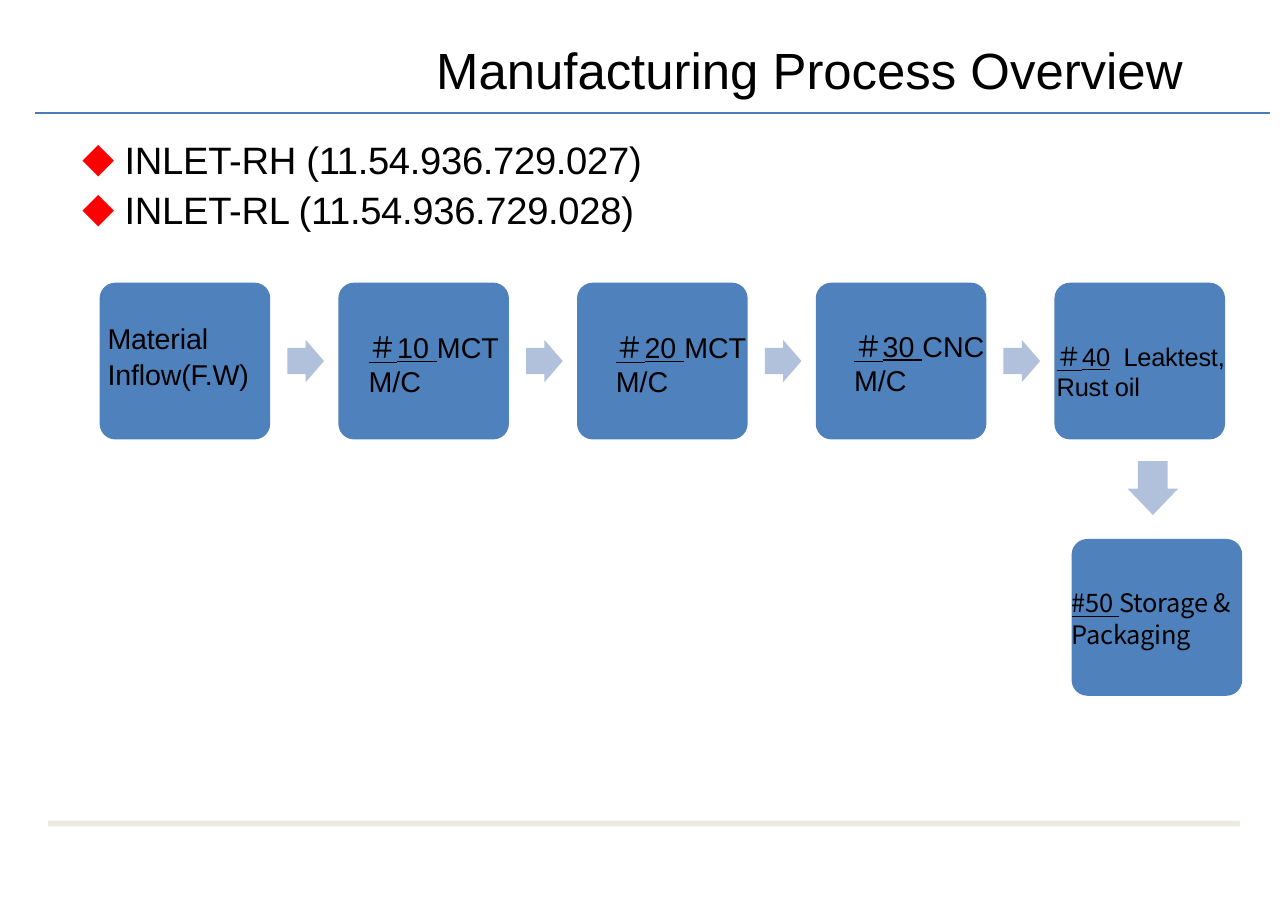
from lxml import etree
from pptx import Presentation
from pptx.dml.color import RGBColor
from pptx.enum.shapes import MSO_CONNECTOR, MSO_SHAPE
from pptx.oxml.ns import qn
from pptx.util import Inches, Pt

BLACK = RGBColor(0, 0, 0)
STEP_BLUE = RGBColor(0x4F, 0x81, 0xBC)
ARROW_BLUE = RGBColor(0xB1, 0xC1, 0xDB)
RULE_BLUE = RGBColor(0x49, 0x7D, 0xBA)
FOOTER_BEIGE = RGBColor(0xED, 0xEB, 0xE0)
LATIN, KOREAN = "Arial", "Noto Sans CJK KR"

presentation = Presentation()
presentation.slide_width = Inches(11.25)
presentation.slide_height = Inches(95 / 12)
slide = presentation.slides.add_slide(presentation.slide_layouts[6])


def add_block(kind, left, top, width, height, color, adjustments=()):
    shape = slide.shapes.add_shape(
        kind, Inches(left), Inches(top), Inches(width), Inches(height))
    shape.shadow.inherit = False
    shape.fill.solid()
    shape.fill.fore_color.rgb = color
    shape.line.fill.background()
    for index, value in enumerate(adjustments):
        shape.adjustments[index] = value


def add_text(left, top, width, height, size, lines, line_spacing=1.0):
    """Add a text box; each line is a list of (text, font, underlined, spacing)."""
    box = slide.shapes.add_textbox(
        Inches(left), Inches(top), Inches(width), Inches(height))
    frame = box.text_frame
    frame.word_wrap = True
    frame.margin_left = frame.margin_right = frame.margin_bottom = 0
    frame.margin_top = Inches(0.01)
    for index, parts in enumerate(lines):
        paragraph = frame.paragraphs[0] if index == 0 else frame.add_paragraph()
        paragraph.line_spacing = line_spacing
        for text, font_name, underlined, spacing in parts:
            run = paragraph.add_run()
            run.text = text
            run.font.size = Pt(size)
            run.font.color.rgb = BLACK
            run.font.underline = underlined
            run.font.name = font_name
            properties = run.font._element
            properties.set("spc", str(spacing))
            etree.SubElement(properties, qn("a:ea"), typeface=font_name)
    return frame


add_block(MSO_SHAPE.RECTANGLE, 0.42, 7.17, 10.41, 0.05, FOOTER_BEIGE)
add_text(3.81, 0.33, 7.34, 0.55, 32,
         [[("Manufacturing Process Overview", LATIN, False, 0)]])

title_rule = slide.shapes.add_connector(
    MSO_CONNECTOR.STRAIGHT, Inches(0.31), Inches(0.99), Inches(11.09), Inches(0.99))
title_rule.line.color.rgb = RULE_BLUE
title_rule.line.width = Pt(1.25)
etree.SubElement(title_rule._element.spPr, qn("a:effectLst"))

# Part numbers
parts = ["INLET-RH (11.54.936.729.027)", "INLET-RL (11.54.936.729.028)"]
for row, part in enumerate(parts):
    frame = add_text(0.71, 1.18 + 0.44 * row, 5.5, 0.42, 24,
                     [[(part, LATIN, False, -20)]])
    properties = frame.paragraphs[0]._p.get_or_add_pPr()
    properties.set("marL", str(Inches(0.38)))
    properties.set("indent", str(Inches(-0.37)))
    bullet_color = etree.SubElement(properties, qn("a:buClr"))
    etree.SubElement(bullet_color, qn("a:srgbClr"), val="FF0000")
    etree.SubElement(properties, qn("a:buSzPct"), val="85000")
    etree.SubElement(properties, qn("a:buFont"), typeface=KOREAN)
    etree.SubElement(properties, qn("a:buChar"), char="◆")

# Process steps and the arrows between them
STEP_LEFT, STEP_TOP, STEP_PITCH = 0.87, 2.47, 2.085
STEP_WIDTH, STEP_HEIGHT = 1.49, 1.37
for step in range(5):
    left = STEP_LEFT + STEP_PITCH * step
    add_block(MSO_SHAPE.ROUNDED_RECTANGLE, left, STEP_TOP, STEP_WIDTH, STEP_HEIGHT,
              STEP_BLUE, [0.1])
    if step < 4:
        add_block(MSO_SHAPE.RIGHT_ARROW, left + 1.64, 2.97, 0.32, 0.37,
                  ARROW_BLUE, [0.62, 0.5])
add_block(MSO_SHAPE.DOWN_ARROW, 9.85, 4.03, 0.44, 0.47, ARROW_BLUE, [0.59, 0.52])
add_block(MSO_SHAPE.ROUNDED_RECTANGLE, 9.36, 4.71, STEP_WIDTH, STEP_HEIGHT,
          STEP_BLUE, [0.1])

# Step labels
add_text(0.94, 2.77, 1.44, 0.6, 18,
         [[("Material Inflow(F.W)", LATIN, False, -10)]], 1.07)
machines = [(3.22, 2.87, "10", "MCT M/C"), (5.38, 2.87, "20", "MCT M/C"),
            (7.46, 2.86, "30", "CNC M/C")]
for left, top, number, machine in machines:
    add_text(left, top, 1.14, 0.62, 18,
             [[("＃", KOREAN, True, 0), (number, LATIN, True, 0),
               (" ", LATIN, True, -20), (machine, LATIN, False, 0)]])
add_text(9.23, 2.97, 1.89, 0.56, 16,
         [[("＃", KOREAN, True, -10), ("40", LATIN, True, -10),
           (" ", LATIN, False, 400), ("Leaktest,", LATIN, False, -10)],
          [("Rust oil", LATIN, False, -10)]])
add_text(9.36, 5.11, 1.52, 0.55, 16,
         [[("#50 ", KOREAN, True, -10),
           ("Storage & Packaging", KOREAN, False, -10)]], 1.05)

presentation.save("out.pptx")
